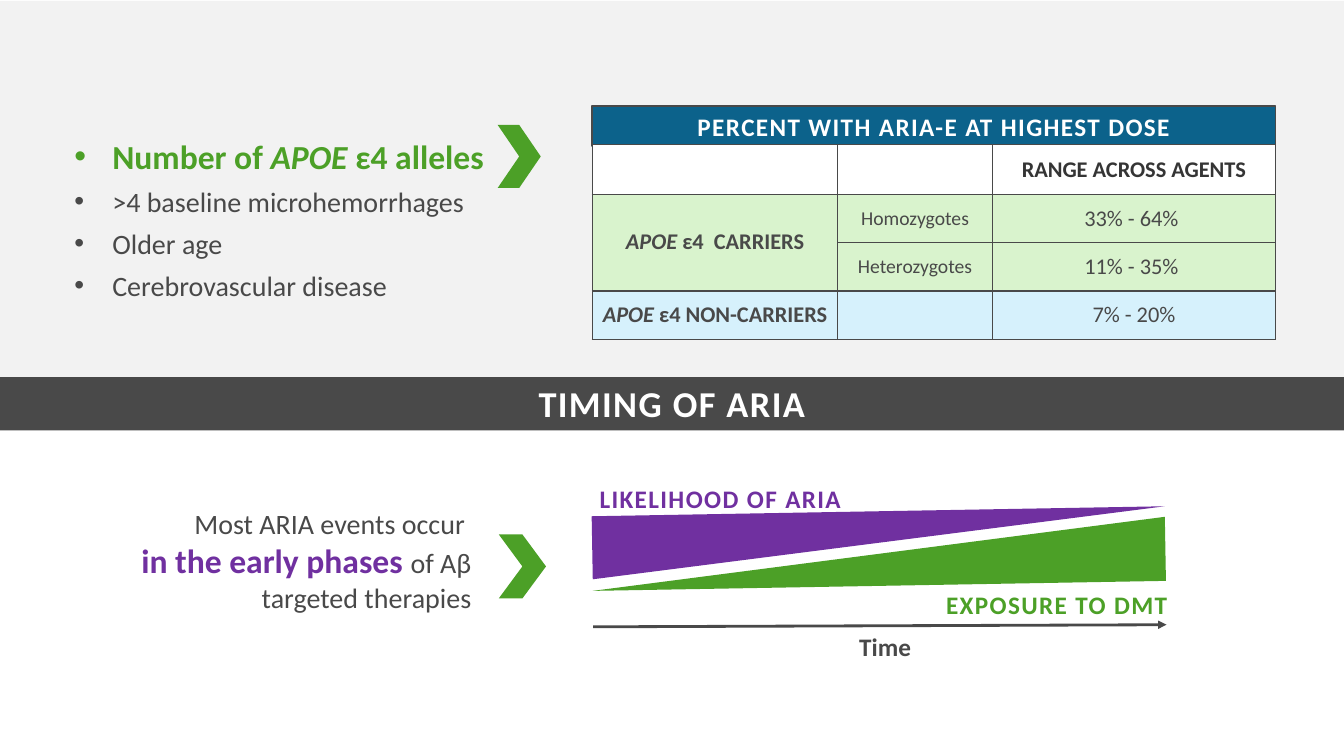
from dataclasses import dataclass

from lxml import etree
from pptx import Presentation
from pptx.dml.color import RGBColor
from pptx.enum.shapes import MSO_CONNECTOR, MSO_SHAPE
from pptx.enum.text import MSO_ANCHOR, MSO_AUTO_SIZE, PP_ALIGN
from pptx.oxml.ns import qn
from pptx.util import Emu, Pt

RECTANGLE, CHEVRON = MSO_SHAPE.RECTANGLE, MSO_SHAPE.CHEVRON
TRIANGLE = MSO_SHAPE.RIGHT_TRIANGLE
STRAIGHT = MSO_CONNECTOR.STRAIGHT
LEFT, CENTER, RIGHT = PP_ALIGN.LEFT, PP_ALIGN.CENTER, PP_ALIGN.RIGHT
TOP, MIDDLE = MSO_ANCHOR.TOP, MSO_ANCHOR.MIDDLE
FIXED = MSO_AUTO_SIZE.NONE


@dataclass(frozen=True)
class Theme:
    """Fonts, colours and type sizes of the deck."""
    font: str = "Calibri"
    dark: str = "494949"
    ink: str = "353535"
    white: str = "FFFFFF"
    panel: str = "F2F2F2"
    purple: str = "7030A0"
    green: str = "4CA027"
    blue: str = "0C628B"
    pale_green: str = "D9F3CD"
    pale_blue: str = "D6F1FC"
    title: int = 26
    strong: int = 24
    body: int = 20
    label: int = 18
    cell: int = 16
    small: int = 14


def px(length):
    """Turn pixels at 96 to the inch into EMU."""
    return Emu(length * 9525)


def style(size, color, bold=False, italic=False, spacing=0):
    """Describe the look of one span."""
    return {"size": size, "color": color, "bold": bold, "italic": italic, "spacing": spacing}


class Page:
    """Draws styled elements on the current slide."""

    def __init__(self, slide, theme):
        """Keep the slide and its theme."""
        self.slide, self.theme = slide, theme

    def paint(self, item, color):
        """Fill a shape or cell with one colour."""
        item.fill.solid()
        item.fill.fore_color.rgb = RGBColor.from_string(color)

    def frame(self, frame, insets=(10, 5, 10, 5), anchor=TOP):
        """Set wrapping, insets and anchor of a text frame."""
        left, top, right, bottom = map(px, insets)
        values = {"word_wrap": True, "auto_size": FIXED, "vertical_anchor": anchor,
                  "margin_left": left, "margin_top": top,
                  "margin_right": right, "margin_bottom": bottom}
        for name, value in values.items():
            setattr(frame, name, value)

    def paragraph(self, para, spans, align=LEFT, after=0, leading=1.0):
        """Fill one paragraph with (text, style) spans."""
        values = {"alignment": align, "space_before": Pt(0),
                  "space_after": Pt(after), "line_spacing": leading}
        for name, value in values.items():
            setattr(para, name, value)
        for text, look in spans:
            span = para.add_run()
            span.text = text
            values = {"name": self.theme.font, "size": Pt(look["size"]),
                      "bold": look["bold"], "italic": look["italic"]}
            for name, value in values.items():
                setattr(span.font, name, value)
            span.font.color.rgb = RGBColor.from_string(look["color"])
            if look["spacing"]:
                span.font._element.set("spc", str(look["spacing"] * 100))

    def title(self, place, text, look, fill):
        """Turn the title placeholder into a filled band."""
        box = self.slide.shapes.title
        for name, value in zip(("left", "top", "width", "height"), place):
            setattr(box, name, px(value))
        self.paint(box, fill)
        self.frame(box.text_frame, (10, 10, 10, 5), MIDDLE)
        self.paragraph(box.text_frame.paragraphs[0], [(text, look)], CENTER, leading=0.85)

    def shape(self, kind, place, fill, outline=None, rotation=0, flip=None):
        """Add a filled preset shape."""
        shape = self.slide.shapes.add_shape(kind, *map(px, place))
        shape.shadow.inherit = False
        shape.rotation = rotation
        self.paint(shape, fill)
        if outline:
            shape.line.color.rgb = RGBColor.from_string(outline)
            shape.line.width = Pt(1)
        else:
            shape.line.fill.background()
        if flip:
            shape._element.spPr.find(qn("a:xfrm")).set(flip, "1")
        return shape

    def text(self, place, paragraphs, align=LEFT, afters=(0,), insets=(10, 5, 10, 5), bullets=False):
        """Add a text box with one list of spans per paragraph."""
        box = self.slide.shapes.add_textbox(*map(px, place))
        self.frame(box.text_frame, insets)
        for index, (spans, after) in enumerate(zip(paragraphs, afters)):
            para = box.text_frame.paragraphs[0] if index == 0 else box.text_frame.add_paragraph()
            if bullets:
                properties = para._p.get_or_add_pPr()
                properties.set("marL", str(px(55)))
                properties.set("indent", str(px(-36)))
                etree.SubElement(properties, qn("a:buFont"), typeface="Arial")
                etree.SubElement(properties, qn("a:buChar"), char="•")
            self.paragraph(para, spans, align, after)

    def arrow(self, start, end, color):
        """Add a straight arrow between two points."""
        line = self.slide.shapes.add_connector(STRAIGHT, *map(px, start + end))
        line.line.color.rgb = RGBColor.from_string(color)
        line.line.width = Pt(2)
        outline = line._element.spPr.find(qn("a:ln"))
        etree.SubElement(outline, qn("a:tailEnd"), type="triangle")
        etree.SubElement(line._element.spPr, qn("a:effectLst"))

    def table(self, place, widths, heights, rows, fills, border):
        """Add a bordered table with one fill per row."""
        table = self.slide.shapes.add_table(len(rows), len(widths), *map(px, place)).table
        table.first_row = table.horz_banding = False
        for column, width in zip(table.columns, widths):
            column.width = px(width)
        for index, (cells, fill) in enumerate(zip(rows, fills)):
            table.rows[index].height = px(heights[index])
            for cell, spans in zip(table.rows[index].cells, cells):
                self.border(cell, border)
                self.paint(cell, fill)
                if spans:
                    cell.vertical_anchor = MIDDLE
                    for side in ("left", "top", "right", "bottom"):
                        setattr(cell, f"margin_{side}", px(10))
                    leading = 0.85 if len(spans) > 1 else 1.0
                    self.paragraph(cell.text_frame.paragraphs[0], spans, CENTER, leading=leading)
        return table

    def border(self, cell, color):
        """Draw a thin line on all sides of a cell."""
        properties = cell._tc.get_or_add_tcPr()
        for side in ("lnL", "lnR", "lnT", "lnB"):
            line = etree.SubElement(properties, qn(f"a:{side}"), w=str(Pt(1)))
            fill = etree.SubElement(line, qn("a:solidFill"))
            etree.SubElement(fill, qn("a:srgbClr"), val=color)


def main():
    """Build the slide and save it."""
    theme = Theme()
    deck = Presentation()
    deck.slide_width, deck.slide_height = px(1280), px(720)
    page = Page(deck.slides.add_slide(deck.slide_layouts[5]), theme)

    body = style(theme.body, theme.dark)
    green = style(theme.strong, theme.green, bold=True)
    purple = style(theme.strong, theme.purple, bold=True)
    cell = style(theme.cell, theme.dark)
    small = style(theme.small, theme.dark)
    group = style(theme.cell, theme.dark, bold=True)
    gene = {**group, "italic": True}

    page.shape(RECTANGLE, (0, 1, 1280, 358), theme.panel)
    page.title((0, 359, 1280, 51), "TIMING OF ARIA",
               style(theme.title, theme.white, bold=True, spacing=1), theme.dark)

    risks = [[("Number of ", green), ("APOE ", {**green, "italic": True}), ("ε4 alleles", green)],
             [(">4 baseline microhemorrhages", body)],
             [("Older age", body)],
             [("Cerebrovascular disease", body)]]
    page.text((42, 124, 467, 170), risks, afters=(6, 6, 6, 12), bullets=True)
    page.shape(CHEVRON, (474, 119, 41, 60), theme.green)

    header = page.shape(RECTANGLE, (564, 101, 651, 38), theme.blue, theme.dark)
    page.frame(header.text_frame, anchor=MIDDLE)
    page.paragraph(header.text_frame.paragraphs[0],
                   [("PERCENT WITH ARIA-E AT HIGHEST DOSE",
                     style(theme.label, theme.white, bold=True, spacing=1))], CENTER)
    rows = [[None, None, [("RANGE ACROSS AGENTS", style(theme.cell, theme.ink, bold=True))]],
            [[("APOE ", gene), ("ε4  CARRIERS", group)], [("Homozygotes", small)], [("33% - 64% ", cell)]],
            [None, [("Heterozygotes", small)], [("11% - 35% ", cell)]],
            [[("APOE ", gene), ("ε4 NON-CARRIERS", group)], None, [("7% - 20%", cell)]]]
    fills = (theme.white, theme.pale_green, theme.pale_green, theme.pale_blue)
    table = page.table((564, 138, 651, 182), (234, 147, 270), (47, 45, 45, 45), rows, fills, theme.dark)
    table.cell(1, 0).merge(table.cell(2, 0))

    timing = [[("Most ARIA events occur ", body)],
              [("in the early phases ", purple), ("of Aβ targeted therapies", body)]]
    page.text((94, 478, 363, 161), timing, RIGHT, (0, 5), (8, 4, 8, 4))
    page.shape(CHEVRON, (475, 509, 45, 61), theme.green)

    page.shape(TRIANGLE, (564, 487, 546, 60), theme.purple, rotation=359, flip="flipV")
    page.shape(TRIANGLE, (564, 497, 546, 61), theme.green, rotation=359, flip="flipH")
    for place, text, color, align, spacing in (
            ((561, 455, 363, 38), "LIKELIHOOD OF ARIA", theme.purple, LEFT, 1),
            ((881, 556, 241, 38), "EXPOSURE TO DMT", theme.green, RIGHT, 1),
            ((735, 596, 216, 38), "Time", theme.dark, CENTER, 0)):
        look = style(theme.label, color, bold=True, spacing=spacing)
        page.text(place, [[(text, look)]], align)
    page.arrow((565, 597), (1111, 595), theme.dark)

    deck.save("out.pptx")


if __name__ == "__main__":
    main()
